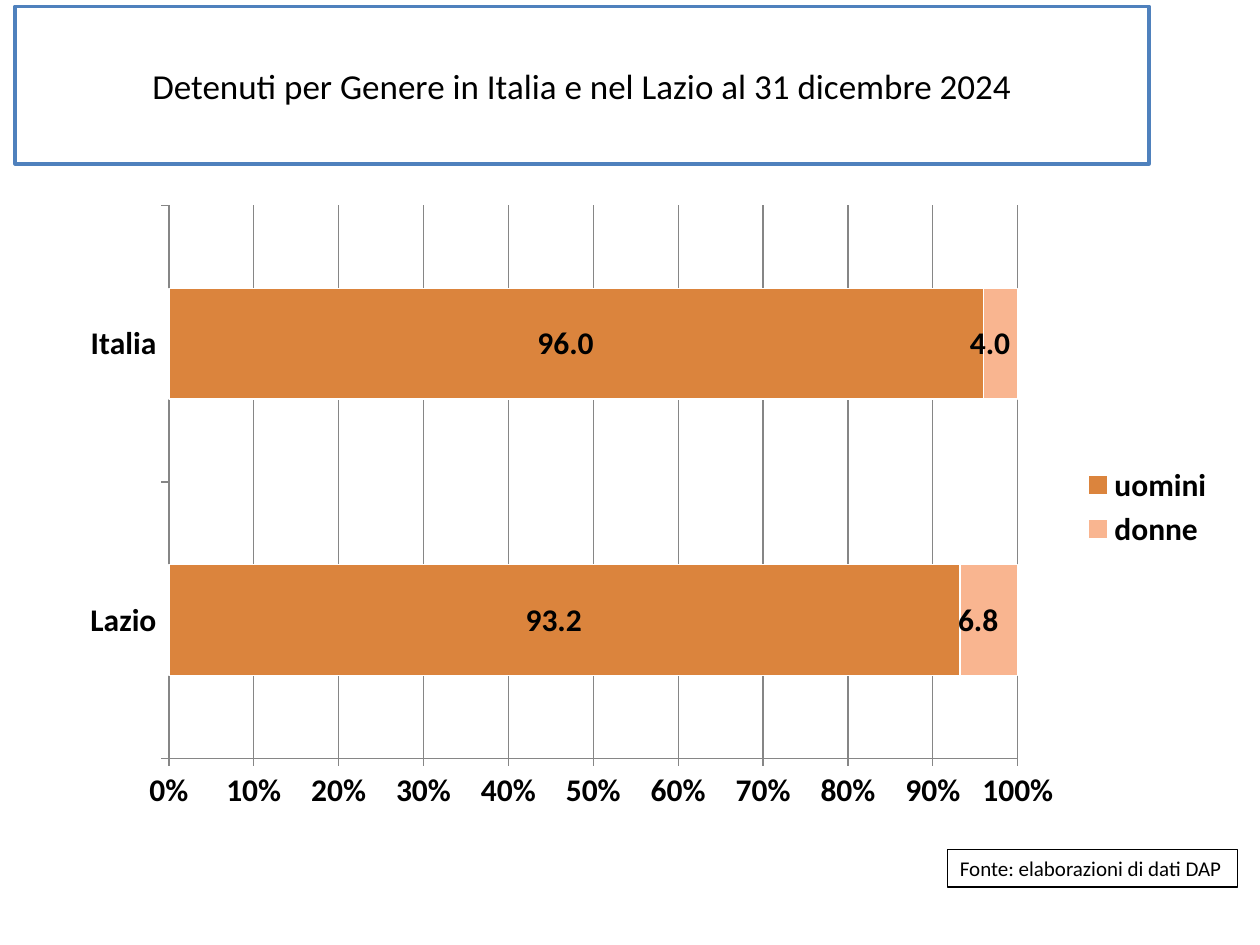
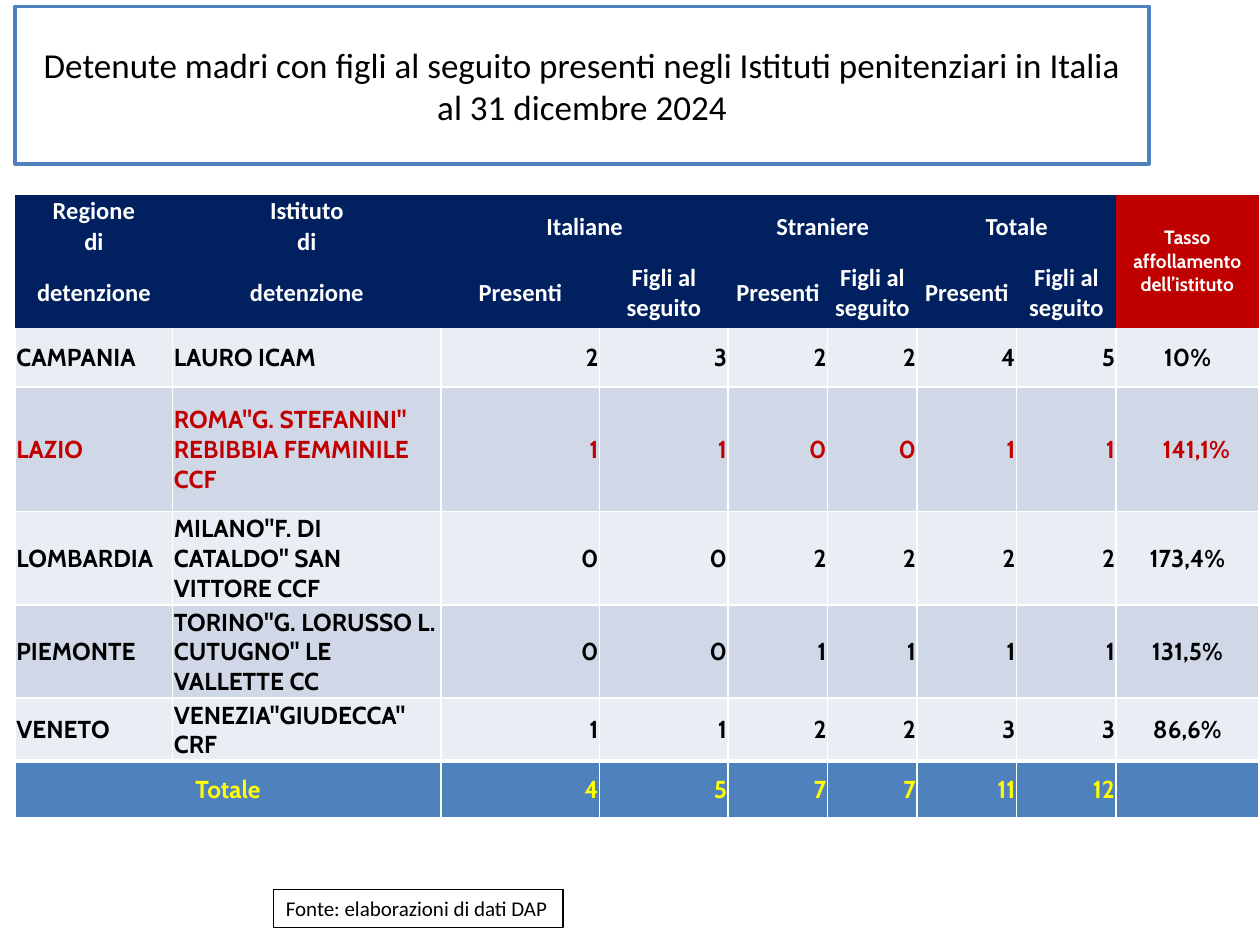
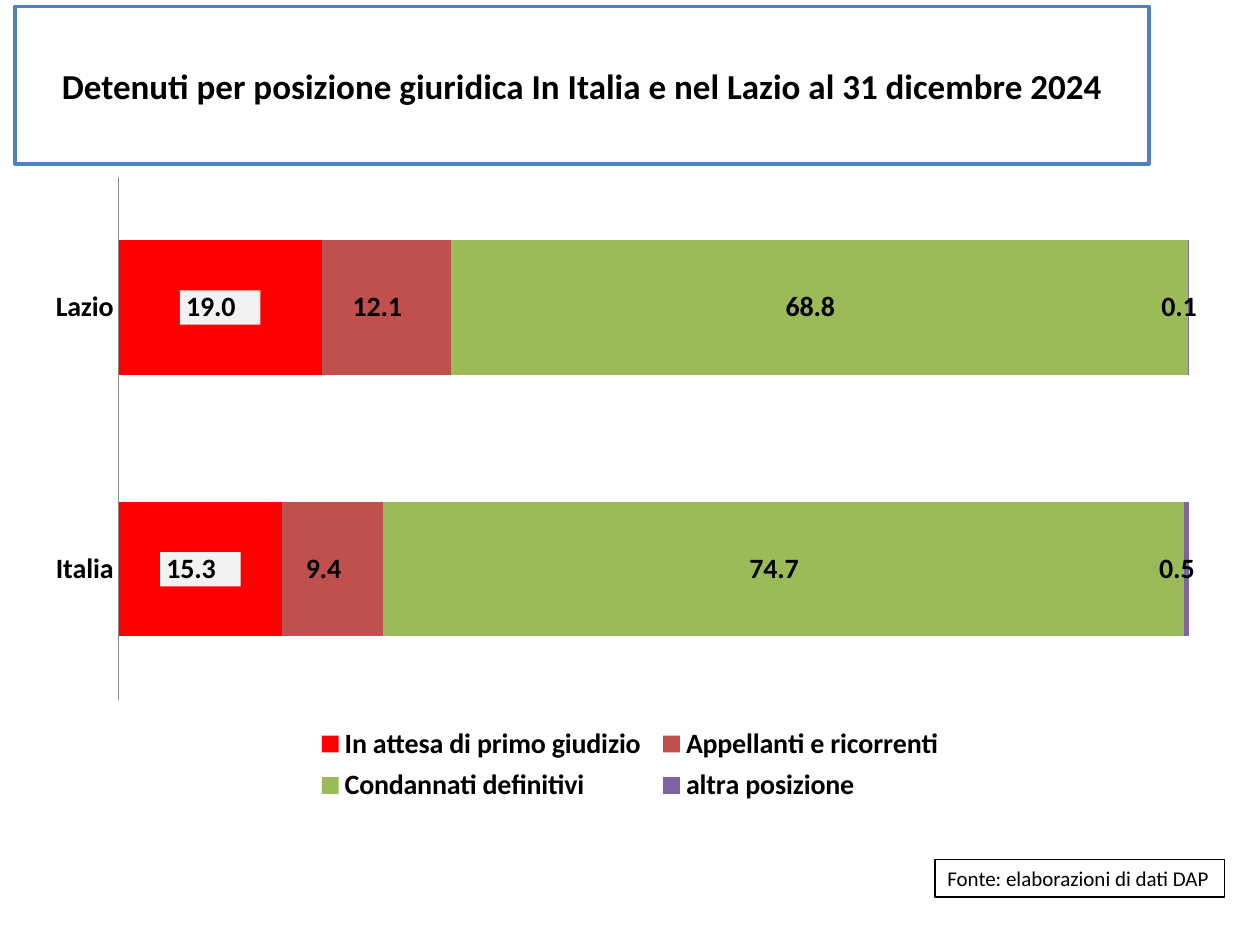
from dataclasses import dataclass
from typing import Optional

from pptx import Presentation
from pptx.chart.chart import Chart
from pptx.chart.data import CategoryChartData
from pptx.dml.color import RGBColor
from pptx.enum.chart import XL_CHART_TYPE as ChartType
from pptx.enum.chart import XL_LABEL_POSITION as LabelPosition
from pptx.enum.chart import XL_LEGEND_POSITION as LegendPosition
from pptx.enum.chart import XL_TICK_LABEL_POSITION as TickLabels
from pptx.enum.chart import XL_TICK_MARK as TickMark
from pptx.enum.shapes import MSO_SHAPE as Preset
from pptx.enum.text import MSO_ANCHOR as Anchor
from pptx.enum.text import MSO_AUTO_SIZE as AutoSize
from pptx.enum.text import PP_ALIGN as Align
from pptx.oxml import parse_xml
from pptx.oxml.ns import nsdecls
from pptx.slide import Slide
from pptx.table import _Cell as Cell
from pptx.util import Inches, Pt

# Shared palette and fonts
BLACK = RGBColor(0x00, 0x00, 0x00)
WHITE = RGBColor(0xFF, 0xFF, 0xFF)
BLUE = RGBColor(0x4F, 0x81, 0xBD)
NAVY = RGBColor(0x00, 0x20, 0x60)
DARK_RED = RGBColor(0xC0, 0x00, 0x00)
YELLOW = RGBColor(0xFF, 0xFF, 0x00)
BAND_LIGHT = RGBColor(0xE9, 0xED, 0xF4)
BAND_DARK = RGBColor(0xD0, 0xD8, 0xE8)
ORANGE = RGBColor(0xDB, 0x84, 0x3D)
PEACH = RGBColor(0xF9, 0xB5, 0x90)
RED = RGBColor(0xFF, 0x00, 0x00)
BRICK = RGBColor(0xC0, 0x50, 0x4D)
GREEN = RGBColor(0x9B, 0xBB, 0x59)
PURPLE = RGBColor(0x80, 0x64, 0xA2)
PALE_GREY = RGBColor(0xF2, 0xF2, 0xF2)
AXIS_GREY = RGBColor(0x86, 0x86, 0x86)

MAIN_FONT = "Calibri"
TABLE_FONT = "Cabin"
VALUE_FORMAT = r'_-* #,##0.0\ _€_-;\-* #,##0.0\ _€_-;_-* "-"??\ _€_-;_-@_-'


@dataclass(frozen=True)
class Box:
    left: float
    top: float
    width: float
    height: float

    def inches(self) -> tuple[Inches, ...]:
        return tuple(Inches(v) for v in (self.left, self.top, self.width, self.height))


@dataclass(frozen=True)
class Series:
    name: str
    values: tuple[float, ...]
    color: RGBColor
    label_fill: Optional[RGBColor] = None


@dataclass(frozen=True)
class ShareChart:
    box: Box
    plot_area: Box  # fractions of the chart
    categories: tuple[str, ...]
    series: tuple[Series, ...]
    font_size: int
    gap: int
    legend_position: LegendPosition
    legend_area: Optional[Box] = None  # fractions of the chart
    bar_outline: Optional[RGBColor] = None


@dataclass(frozen=True)
class Prison:
    region: str
    name: str
    counts: tuple[int, ...]
    crowding: str
    color: RGBColor = BLACK
    crowding_indent: float = 0.01


TITLE_BOX = Box(0.12, 0.05, 9, 1.25)

GENDER_CHART = ShareChart(
    box=Box(0.51, 1.53, 9.23, 4.99),
    plot_area=Box(0.09, 0.02, 0.73, 0.88),
    categories=("Lazio", "Italia"),
    series=(Series("uomini", (93.2, 96), ORANGE), Series("donne", (6.8, 4), PEACH)),
    font_size=18,
    gap=150,
    legend_position=LegendPosition.RIGHT,
    bar_outline=WHITE,
)

POSITION_CHART = ShareChart(
    box=Box(0.28, 1.3, 9.44, 5.13),
    plot_area=Box(0.07, 0.02, 0.9, 0.81),
    categories=("Lazio", "Italia"),
    series=(
        Series("In attesa di primo giudizio", (19, 15.3), RED, PALE_GREY),
        Series("Appellanti e ricorrenti", (12.1, 9.4), BRICK),
        Series("Condannati definitivi", (68.8, 74.7), GREEN),
        Series("altra posizione", (0.1, 0.5), PURPLE),
    ),
    font_size=16,
    gap=95,
    legend_position=LegendPosition.BOTTOM,
    legend_area=Box(0.23, 0.86, 0.54, 0.15),
)

TABLE_BOX = Box(0.12, 1.55, 9.88, 4.88)
COLUMN_WIDTHS = (1.25, 2.13, 1.26, 1.02, 0.79, 0.71, 0.79, 0.79, 1.13)
ROW_HEIGHTS = (0.25, 0.25, 0.49, 0.47, 0.99, 0.74, 0.74, 0.5, 0.45)
HEADER_ROWS = 3
CROWDING_COLUMN = len(COLUMN_WIDTHS) - 1
GROUPS = ("Italiane", "Straniere", "Totale")
PRISONS = (
    Prison("CAMPANIA", "LAURO ICAM", (2, 3, 2, 2, 4, 5), "10%"),
    Prison("LAZIO", 'ROMA"G. STEFANINI" REBIBBIA FEMMINILE CCF',
           (1, 1, 0, 0, 1, 1), "141,1%", DARK_RED, 0.15),
    Prison("LOMBARDIA", 'MILANO"F. DI CATALDO" SAN VITTORE CCF',
           (0, 0, 2, 2, 2, 2), "173,4%"),
    Prison("PIEMONTE", 'TORINO"G. LORUSSO L. CUTUGNO" LE VALLETTE CC',
           (0, 0, 1, 1, 1, 1), "131,5%"),
    Prison("VENETO", 'VENEZIA"GIUDECCA" CRF', (1, 1, 2, 2, 3, 3), "86,6%"),
)
TOTALS = (4, 5, 7, 7, 11, 12)


def style_font(font, size: float, color: RGBColor, bold: bool = False,
               name: str = MAIN_FONT) -> None:
    font.name, font.size, font.bold = name, Pt(size), bold
    font.color.rgb = color


def add_title(slide: Slide, text: str, bold: bool = False) -> None:
    title = slide.shapes.add_shape(Preset.RECTANGLE, *TITLE_BOX.inches())
    title.shadow.inherit = False
    title.fill.solid()
    title.fill.fore_color.rgb = WHITE
    title.line.color.rgb = BLUE
    title.line.width = Pt(2)
    title.text_frame.word_wrap = True
    title.text_frame.vertical_anchor = Anchor.MIDDLE
    title.text_frame.text = text
    heading = title.text_frame.paragraphs[0]
    heading.alignment = Align.CENTER
    style_font(heading.font, 20, BLACK, bold)


def add_source(slide: Slide, left: float, top: float) -> None:
    source = slide.shapes.add_textbox(*Box(left, top, 2.3, 0.3).inches())
    source.fill.solid()
    source.fill.fore_color.rgb = WHITE
    source.line.color.rgb = BLACK
    source.line.width = Pt(0.75)
    source.text_frame.word_wrap = False
    source.text_frame.auto_size = AutoSize.SHAPE_TO_FIT_TEXT
    source.text_frame.text = "Fonte: elaborazioni di dati DAP"
    style_font(source.text_frame.paragraphs[0].font, 12, BLACK)


# Charts
def manual_layout(area: Box, inner: bool):
    target = '<c:layoutTarget val="inner"/>' if inner else ""
    return parse_xml(
        f'<c:layout {nsdecls("c")}><c:manualLayout>{target}'
        '<c:xMode val="edge"/><c:yMode val="edge"/>'
        f'<c:x val="{area.left}"/><c:y val="{area.top}"/>'
        f'<c:w val="{area.width}"/><c:h val="{area.height}"/>'
        "</c:manualLayout></c:layout>")


def place_chart_parts(chart: Chart, layout: ShareChart) -> None:
    for old in chart.element.xpath("c:chart/c:plotArea/c:layout | c:chart/c:legend/c:layout"):
        old.getparent().remove(old)
    plot_area = chart.element.xpath("c:chart/c:plotArea")[0]
    plot_area.insert(0, manual_layout(layout.plot_area, inner=True))
    if layout.legend_area:
        legend_pos = chart.element.xpath("c:chart/c:legend/c:legendPos")[0]
        legend_pos.addnext(manual_layout(layout.legend_area, inner=False))


def fill_labels(chart: Chart, series_index: int, color: RGBColor) -> None:
    number_format = chart.element.xpath(f"//c:ser[{series_index + 1}]/c:dLbls/c:numFmt")[0]
    number_format.addnext(parse_xml(
        f'<c:spPr {nsdecls("c", "a")}><a:solidFill><a:srgbClr val="{color}"/>'
        "</a:solidFill></c:spPr>"))


def add_share_chart(slide: Slide, share: ShareChart) -> Chart:
    data = CategoryChartData()
    data.categories = share.categories
    for part in share.series:
        data.add_series(part.name, part.values)
    chart = slide.shapes.add_chart(
        ChartType.BAR_STACKED_100, *share.box.inches(), data).chart
    style_font(chart.font, share.font_size, BLACK, bold=True)
    chart.has_title = False
    chart.has_legend = True
    chart.legend.position = share.legend_position
    chart.legend.include_in_layout = False

    plot = chart.plots[0]
    plot.gap_width, plot.overlap = share.gap, 100
    plot.vary_by_categories = False
    for index, (bars, part) in enumerate(zip(plot.series, share.series)):
        bars.format.fill.solid()
        bars.format.fill.fore_color.rgb = part.color
        if share.bar_outline:
            bars.format.line.color.rgb = share.bar_outline
            bars.format.line.width = Pt(0.75)
        labels = bars.data_labels
        labels.show_value = True
        labels.number_format = VALUE_FORMAT
        labels.number_format_is_linked = False
        labels.position = LabelPosition.CENTER
        style_font(labels.font, share.font_size, BLACK, bold=True)
        if part.label_fill:
            fill_labels(chart, index, part.label_fill)

    chart.category_axis.format.line.color.rgb = AXIS_GREY
    place_chart_parts(chart, share)
    return chart


# Table
def set_borders(cell: Cell, widths: dict[str, float]) -> None:
    """Draw white borders; a side of width 0 stays empty."""
    properties = cell._tc.get_or_add_tcPr()
    for position, (side, width) in enumerate(widths.items()):
        paint = (f'<a:solidFill><a:srgbClr val="{WHITE}"/></a:solidFill>'
                 if width else "<a:noFill/>")
        properties.insert(position, parse_xml(
            f'<a:ln{side} {nsdecls("a")} w="{Pt(width)}">{paint}</a:ln{side}>'))


def write_cell(cell: Cell, text: str, align: Align, color: RGBColor,
               size: float = 14, font: str = TABLE_FONT) -> None:
    cell.text = text
    paragraph = cell.text_frame.paragraphs[0]
    paragraph.alignment = align
    style_font(paragraph.font, size, color, bold=True, name=font)


def add_mothers_table(slide: Slide) -> None:
    table = slide.shapes.add_table(
        len(ROW_HEIGHTS), len(COLUMN_WIDTHS), *TABLE_BOX.inches()).table
    table.first_row = table.horz_banding = False
    for column, width in zip(table.columns, COLUMN_WIDTHS):
        column.width = Inches(width)
    for row, height in zip(table.rows, ROW_HEIGHTS):
        row.height = Inches(height)

    # Fills, margins and borders
    total_row = len(ROW_HEIGHTS) - 1
    for r, row in enumerate(table.rows):
        for c, cell in enumerate(row.cells):
            is_header = r < HEADER_ROWS
            if is_header:
                fill = DARK_RED if c == CROWDING_COLUMN else NAVY
            elif r == total_row:
                fill = BLUE
            else:
                fill = BAND_DARK if (r - HEADER_ROWS) % 2 else BAND_LIGHT
            cell.fill.solid()
            cell.fill.fore_color.rgb = fill
            cell.vertical_anchor = Anchor.MIDDLE
            margin = Inches(0 if is_header else 0.01)
            cell.margin_left = cell.margin_right = cell.margin_top = margin
            cell.margin_bottom = 0
            edge = 0 if is_header else 1
            top = {HEADER_ROWS: 0, total_row: 3}.get(r, edge)
            bottom = 3 if r == total_row - 1 else edge
            set_borders(cell, {"L": edge, "R": edge, "T": top, "B": bottom})

    # Header
    def head(r: int, c: int, text: str) -> None:
        write_cell(table.cell(r, c), text, Align.CENTER, WHITE, font=MAIN_FONT)

    for c, subject in enumerate(("Regione", "Istituto")):
        for r, word in enumerate((subject, "di", "detenzione")):
            head(r, c, word)
    for g, group in enumerate(GROUPS):
        c = 2 + 2 * g
        table.cell(0, c).merge(table.cell(1, c + 1))
        head(0, c, group)
        head(2, c, "Presenti")
        head(2, c + 1, "Figli al seguito")
    table.cell(0, CROWDING_COLUMN).merge(table.cell(HEADER_ROWS - 1, CROWDING_COLUMN))
    write_cell(table.cell(0, CROWDING_COLUMN), "Tasso affollamento dell’istituto",
               Align.CENTER, WHITE, size=11)

    # Prisons and totals
    def write_counts(r: int, counts: tuple[int, ...], color: RGBColor) -> None:
        for c, count in enumerate(counts, start=2):
            write_cell(table.cell(r, c), str(count), Align.RIGHT, color)

    for r, prison in enumerate(PRISONS, start=HEADER_ROWS):
        write_cell(table.cell(r, 0), prison.region, Align.LEFT, prison.color)
        write_cell(table.cell(r, 1), prison.name, Align.LEFT, prison.color)
        write_counts(r, prison.counts, prison.color)
        crowding = table.cell(r, CROWDING_COLUMN)
        write_cell(crowding, prison.crowding, Align.CENTER, prison.color)
        crowding.margin_left = Inches(prison.crowding_indent)
    table.cell(total_row, 0).merge(table.cell(total_row, 1))
    write_cell(table.cell(total_row, 0), "Totale", Align.CENTER, YELLOW)
    write_counts(total_row, TOTALS, YELLOW)


# Slides
def build_gender_slide(slide: Slide) -> None:
    add_title(slide, "Detenuti per Genere in Italia e nel Lazio al 31 dicembre 2024")
    add_source(slide, 7.52, 6.74)
    chart = add_share_chart(slide, GENDER_CHART)
    chart.category_axis.major_tick_mark = TickMark.OUTSIDE
    shares = chart.value_axis
    shares.minimum_scale, shares.major_unit = 0, 0.1
    shares.major_tick_mark = TickMark.OUTSIDE
    shares.tick_labels.number_format = "0%"
    shares.tick_labels.number_format_is_linked = False
    shares.has_major_gridlines = True
    for line in (shares.format.line, shares.major_gridlines.format.line):
        line.color.rgb = AXIS_GREY


def build_mothers_slide(slide: Slide) -> None:
    add_title(slide, "Detenute madri con figli al seguito presenti negli Istituti "
                     "penitenziari in Italia\val 31 dicembre 2024")
    add_source(slide, 2.17, 7.06)
    add_mothers_table(slide)


def build_position_slide(slide: Slide) -> None:
    add_title(slide, "Detenuti per posizione giuridica In Italia e nel Lazio "
                     "al 31 dicembre 2024", bold=True)
    add_source(slide, 7.42, 6.82)
    chart = add_share_chart(slide, POSITION_CHART)
    chart.category_axis.reverse_order = True
    chart.category_axis.major_tick_mark = TickMark.NONE
    chart.value_axis.has_major_gridlines = False
    chart.value_axis.tick_label_position = TickLabels.NONE
    chart.value_axis.visible = False


def main() -> None:
    deck = Presentation()
    deck.slide_width, deck.slide_height = Inches(10), Inches(7.5)
    blank = deck.slide_layouts[6]
    for build in (build_gender_slide, build_mothers_slide, build_position_slide):
        build(deck.slides.add_slide(blank))
    deck.save("out.pptx")


if __name__ == "__main__":
    main()
